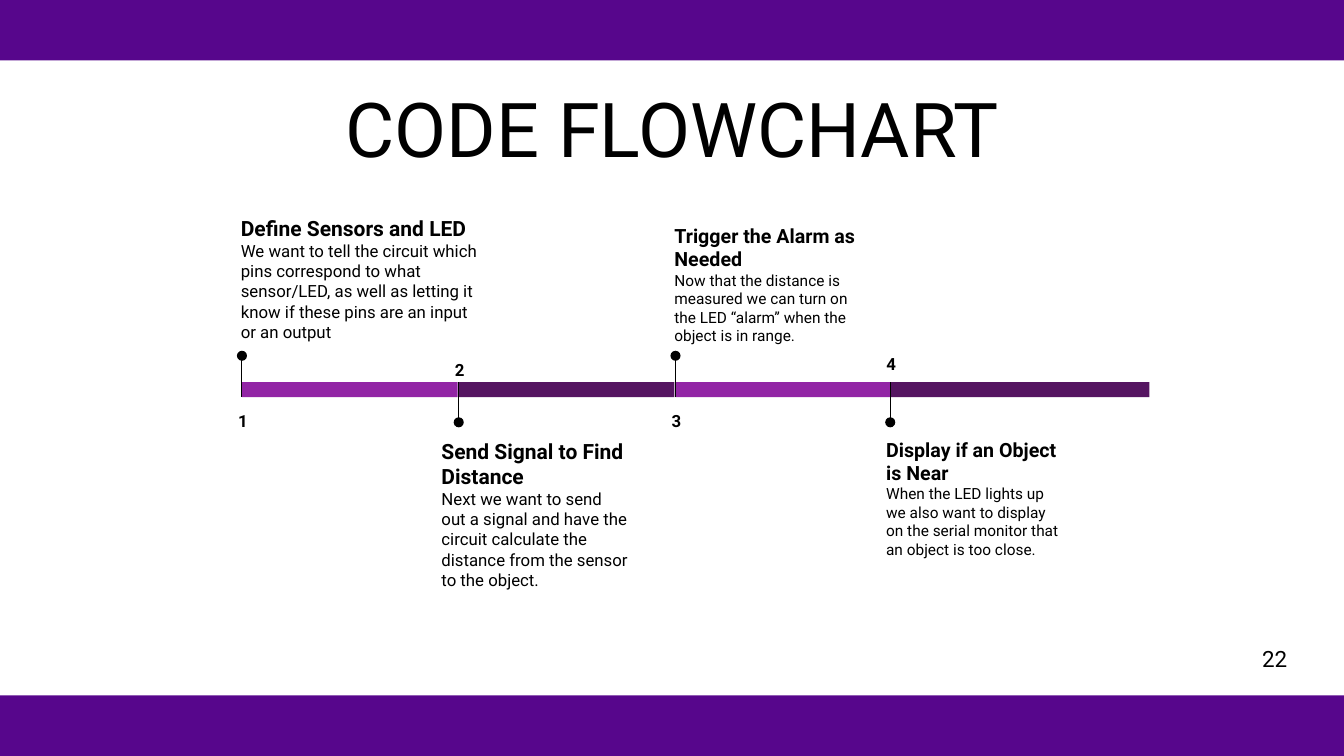
from pptx import Presentation
from pptx.dml.color import RGBColor
from pptx.enum.shapes import MSO_CONNECTOR, MSO_SHAPE
from pptx.enum.text import MSO_ANCHOR, PP_ALIGN
from pptx.oxml.ns import qn
from pptx.util import Pt
from lxml import etree

PX = 9144  # 100 px to the inch
W, H = 1333, 750
FONT = "Roboto"
COLORS = {"band": "57068C", "light": "9225A5", "dark": "551561", "ink": "000000"}

BAR_TOP, BAR_H = 379, 15
DOT = 10
STEM = 39

# pin x, bar width, label top, text box, heading size, body size, heading, body
STEPS = [
    (240, 214, 394, (229, 204, 261, 103), 15, 12, "Define Sensors and LED",
     "We want to tell the circuit which pins correspond to what sensor/LED, "
     "as well as letting it know if these pins are an input or an output"),
    (455, 214, 344, (428, 425, 205, 120), 15, 12, "Send Signal to Find Distance",
     "Next we want to send out a signal and have the circuit calculate the "
     "distance from the sensor to the object."),
    (670, 214, 394, (659, 212, 210, 103), 14, 11, "Trigger the Alarm as Needed",
     "Now that the distance is measured we can turn on the LED “alarm” when "
     "the object is in range."),
    (883, 257, 338, (869, 424, 195, 154), 14, 11, "Display if an Object is Near",
     "When the LED lights up we also want to display on the serial monitor "
     "that an object is too close."),
]


def emu(*lengths):
    return [round(n * PX) for n in lengths]


def add_shape(s, kind, box, color):
    sp = s.shapes.add_shape(kind, *emu(*box))
    sp.shadow.inherit = False
    sp.fill.solid()
    sp.fill.fore_color.rgb = RGBColor.from_string(COLORS[color])
    sp.line.fill.background()


def add_line(s, x, top, bottom):
    line = s.shapes.add_connector(MSO_CONNECTOR.STRAIGHT, *emu(x, top, x, bottom))
    line.line.color.rgb = RGBColor.from_string(COLORS["ink"])
    line.line.width = Pt(0.75)
    etree.SubElement(line._element.spPr, qn("a:effectLst"))


def add_text(s, box, paragraphs, inset=10, align=PP_ALIGN.LEFT, spacing=None,
             anchor=MSO_ANCHOR.TOP):
    """Each paragraph is a (text, size, bold) tuple."""
    tf = s.shapes.add_textbox(*emu(*box)).text_frame
    tf.word_wrap = True
    tf.vertical_anchor = anchor
    tf.margin_left, tf.margin_right = emu(10, 10)
    tf.margin_top, tf.margin_bottom = emu(inset, inset)
    for i, (text, size, bold) in enumerate(paragraphs):
        p = tf.add_paragraph() if i else tf.paragraphs[0]
        p.alignment = align
        p.line_spacing = spacing
        r = p.add_run()
        r.text = text
        r.font.name = FONT
        r.font.size = Pt(size)
        r.font.bold = bold
        r.font.color.rgb = RGBColor.from_string(COLORS["ink"])


def add_frame(s, w, h):
    # Bands at top and bottom, page number
    for top in (0, h - 60):
        add_shape(s, MSO_SHAPE.RECTANGLE, (0, top, w, 60), "band")
    add_text(s, (w - 91, h - 115, 51, 37), [("22", 16, False)], inset=5)


def add_title(s, box):
    add_text(s, box, [("CODE FLOWCHART", 54, False)], inset=5,
             align=PP_ALIGN.CENTER, spacing=0.9, anchor=MSO_ANCHOR.MIDDLE)


def add_step(s, i, step):
    x, width, label_top, box, head_size, body_size, heading, body = step
    above = i % 2 == 0
    # Bar segment
    add_shape(s, MSO_SHAPE.RECTANGLE, (x, BAR_TOP, width, BAR_H),
              "light" if above else "dark")
    # Pin: stem and dot
    top = BAR_TOP + BAR_H - STEM if above else BAR_TOP
    add_line(s, x, top, top + STEM)
    dot_top = top - 7 if above else top + STEM - 4
    add_shape(s, MSO_SHAPE.OVAL, (x - DOT // 2, dot_top, DOT, DOT), "ink")
    # Number, then heading and body
    add_text(s, (x - 40, label_top, 82, 41), [(str(i + 1), 12, True)],
             align=PP_ALIGN.CENTER, spacing=1.15)
    add_text(s, box, [(heading, head_size, True), (body, body_size, False)])


def main():
    prs = Presentation()
    prs.slide_width, prs.slide_height = emu(W, H)
    s = prs.slides.add_slide(prs.slide_layouts[6])
    add_frame(s, W, H)
    add_title(s, (92, 59, 1150, 145))
    for i, step in enumerate(STEPS):
        add_step(s, i, step)
    prs.save("out.pptx")


if __name__ == "__main__":
    main()
